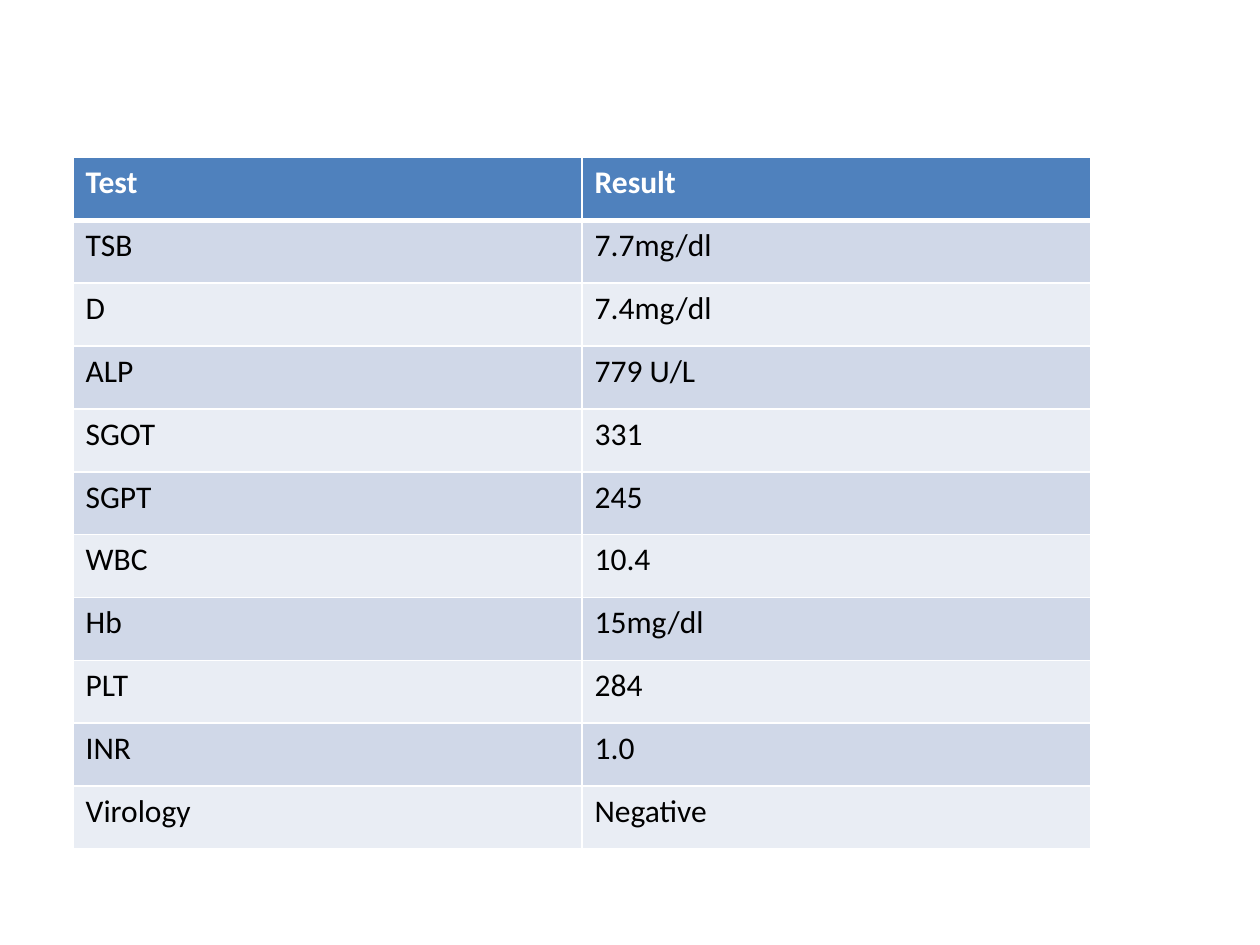
from lxml.etree import SubElement
from pptx import Presentation
from pptx.dml.color import RGBColor
from pptx.oxml.ns import qn
from pptx.util import Inches, Pt

RESULTS = [
    ("Test", "Result"),
    ("TSB", "7.7mg/dl"),
    ("D", "7.4mg/dl"),
    ("ALP", "779 U/L"),
    ("SGOT", "331"),
    ("SGPT", "245"),
    ("WBC", "10.4"),
    ("Hb", "15mg/dl"),
    ("PLT", "284"),
    ("INR", "1.0"),
    ("Virology", "Negative"),
]


def color(hex_value):
    return RGBColor.from_string(hex_value)


class SlideBuilder:
    FONT = "Calibri"
    SIZE = 18
    HEADER_FILL, HEADER_TEXT = "4F81BD", "FFFFFF"
    BAND_FILLS, BODY_TEXT = ("D0D8E8", "E9EDF4"), "000000"
    BORDER = "FFFFFF"

    def __init__(self, slide):
        self.slide = slide

    def table(self, rows, left, top, width, height):
        shape = self.slide.shapes.add_table(
            len(rows), len(rows[0]),
            Inches(left), Inches(top), Inches(width), Inches(height))
        for row_index, values in enumerate(rows):
            for column_index, value in enumerate(values):
                self.cell(shape.table.cell(row_index, column_index), value, row_index)

    def cell(self, cell, value, row_index):
        is_header = row_index == 0

        # Borders come before the fill in the cell properties
        self.border(cell, "L", 1)
        self.border(cell, "R", 1)
        self.border(cell, "T", 3 if row_index == 1 else 1)
        self.border(cell, "B", 3 if is_header else 1)
        cell.fill.solid()
        cell.fill.fore_color.rgb = color(
            self.HEADER_FILL if is_header else self.BAND_FILLS[(row_index - 1) % 2])

        # Text
        cell.text_frame.text = value
        font = cell.text_frame.paragraphs[0].runs[0].font
        font.name = self.FONT
        font.size = Pt(self.SIZE)
        font.bold = is_header
        font.color.rgb = color(self.HEADER_TEXT if is_header else self.BODY_TEXT)

    def border(self, cell, side, points):
        properties = cell._tc.get_or_add_tcPr()
        line = SubElement(properties, qn(f"a:ln{side}"), w=str(Pt(points)))
        fill = SubElement(line, qn("a:solidFill"))
        SubElement(fill, qn("a:srgbClr"), val=self.BORDER)


def main():
    presentation = Presentation()
    presentation.slide_width = Inches(10)
    presentation.slide_height = Inches(7.5)
    slide = presentation.slides.add_slide(presentation.slide_layouts[6])

    # Laboratory results
    SlideBuilder(slide).table(RESULTS, 0.58, 1.25, 8.08, 5.49)

    presentation.save("out.pptx")


if __name__ == "__main__":
    main()
